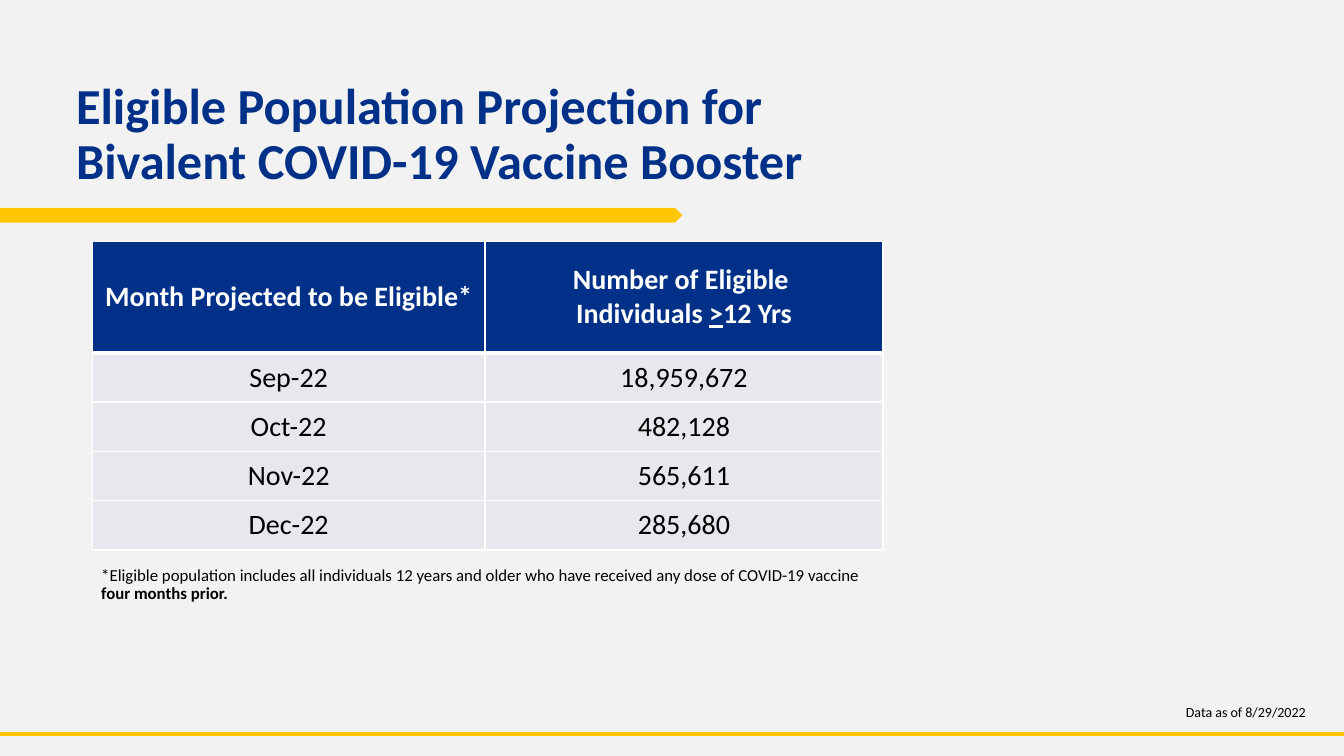
from dataclasses import dataclass

from lxml import etree
from pptx import Presentation
from pptx import util as u
from pptx.dml.color import RGBColor
from pptx.enum import shapes, text
from pptx.oxml import ns

PX = 9525  # EMU per px, 96 px to the inch


@dataclass(frozen=True)
class Theme:
    font: str = "Calibri"
    background: str = "F2F2F2"
    navy: str = "003087"
    gold: str = "FFC600"
    row_fill: str = "E7E8ED"
    white: str = "FFFFFF"
    black: str = "000000"
    title_size: int = 36
    table_size: int = 20
    note_size: int = 12
    date_size: int = 10


THEME = Theme()

HEADERS = [
    [[("Month Projected to be Eligible*", False)]],
    [[("Number of Eligible ", False)],
     [("Individuals ", False), (">", True), ("12 Yrs", False)]],
]
PROJECTIONS = [
    ("Sep-22", "18,959,672"),
    ("Oct-22", "482,128"),
    ("Nov-22", "565,611"),
    ("Dec-22", "285,680"),
]


def emu(*lengths):
    return [length * PX for length in lengths]


def colour(value):
    return RGBColor.from_string(value)


def set_font(paragraph, size, value, bold=False):
    font = paragraph.font
    font.name = THEME.font
    font.size = u.Pt(size)
    font.bold = bold
    font.color.rgb = colour(value)


def add_text(slide, box, words, size, value, bold=False, anchor=text.MSO_ANCHOR.TOP):
    frame = slide.shapes.add_textbox(*emu(*box)).text_frame
    frame.word_wrap = True
    frame.vertical_anchor = anchor
    paragraph = frame.paragraphs[0]
    paragraph.add_run().text = words
    set_font(paragraph, size, value, bold)
    return paragraph


def set_border(cell, side, points):
    border = etree.SubElement(cell._tc.get_or_add_tcPr(), ns.qn(f"a:ln{side}"),
                              w=str(u.Pt(points)))
    fill = etree.SubElement(border, ns.qn("a:solidFill"))
    etree.SubElement(fill, ns.qn("a:srgbClr"), val=THEME.white)


def style_cell(cell, fill, top, bottom):
    cell.margin_left = cell.margin_right = cell.margin_top = cell.margin_bottom = 0
    cell.vertical_anchor = text.MSO_ANCHOR.MIDDLE
    for side, points in (("L", 1), ("R", 1), ("T", top), ("B", bottom)):
        set_border(cell, side, points)
    cell.fill.solid()
    cell.fill.fore_color.rgb = colour(fill)


def fill_cell(cell, lines, value, bold):
    frame = cell.text_frame
    for index, line in enumerate(lines):
        paragraph = frame.add_paragraph() if index else frame.paragraphs[0]
        paragraph.alignment = text.PP_ALIGN.CENTER
        for words, underlined in line:
            run = paragraph.add_run()
            run.text = words
            if underlined:
                run.font.underline = True
        set_font(paragraph, THEME.table_size, value, bold)


def add_heading(slide, box):
    left, top, width, height = box
    # Title
    title = add_text(slide, (left + 63, top, 823, 116),
                     "Eligible Population Projection for Bivalent COVID-19 Vaccine Booster",
                     THEME.title_size, THEME.navy, True, text.MSO_ANCHOR.MIDDLE)
    title.line_spacing = 0.9
    # Gold pointer under the title
    bar = slide.shapes.add_shape(shapes.MSO_SHAPE.PENTAGON,
                                 *emu(left, top + height - 14, width, 14))
    bar.shadow.inherit = False
    bar.fill.solid()
    bar.fill.fore_color.rgb = colour(THEME.gold)
    bar.line.fill.background()


def add_projection_table(slide, box, header_height):
    height = box[3]
    table = slide.shapes.add_table(len(PROJECTIONS) + 1, len(HEADERS), *emu(*box)).table
    table.horz_banding = False
    for column, width in zip(table.columns, (374, 379)):
        column.width = width * PX
    row_height = (height - header_height) // len(PROJECTIONS)
    for index, row in enumerate(table.rows):
        row.height = (row_height if index else header_height) * PX
    # Header row
    for column, lines in enumerate(HEADERS):
        cell = table.cell(0, column)
        style_cell(cell, THEME.navy, 1, 3)
        fill_cell(cell, lines, THEME.white, True)
    # Monthly rows
    for row, values in enumerate(PROJECTIONS, start=1):
        for column, value in enumerate(values):
            cell = table.cell(row, column)
            style_cell(cell, THEME.row_fill, 3 if row == 1 else 1, 1)
            fill_cell(cell, [[(value, False)]], THEME.black, False)


def add_note(slide, box):
    note = add_text(slide, box,
                    "*Eligible population includes all individuals 12 years and older "
                    "who have received any dose of COVID-19 vaccine ",
                    THEME.note_size, THEME.black)
    note.line_spacing = 0.9
    period = note.add_run()
    period.text = "four months prior."
    period.font.bold = True


def add_footer(slide, box):
    left, top, width, height = box
    # Gold rule
    rule = slide.shapes.add_connector(shapes.MSO_CONNECTOR.STRAIGHT,
                                      *emu(left, top + height, left + width, top + height))
    rule.line.color.rgb = colour(THEME.gold)
    rule.line.width = u.Pt(3)
    etree.SubElement(rule._element.spPr, ns.qn("a:effectLst"))
    # Date of the data
    add_text(slide, (left + width - 160, top, 160, 26), "Data as of 8/29/2022",
             THEME.date_size, THEME.black)


def main():
    presentation = Presentation()
    presentation.slide_width, presentation.slide_height = emu(1280, 720)
    slide = presentation.slides.add_slide(presentation.slide_layouts[6])
    slide.background.fill.solid()
    slide.background.fill.fore_color.rgb = colour(THEME.background)
    add_heading(slide, (0, 71, 650, 141))
    add_projection_table(slide, (88, 230, 753, 294), 106)
    add_note(slide, (87, 535, 764, 49))
    add_footer(slide, (0, 665, 1280, 34))
    presentation.save("out.pptx")


if __name__ == "__main__":
    main()
